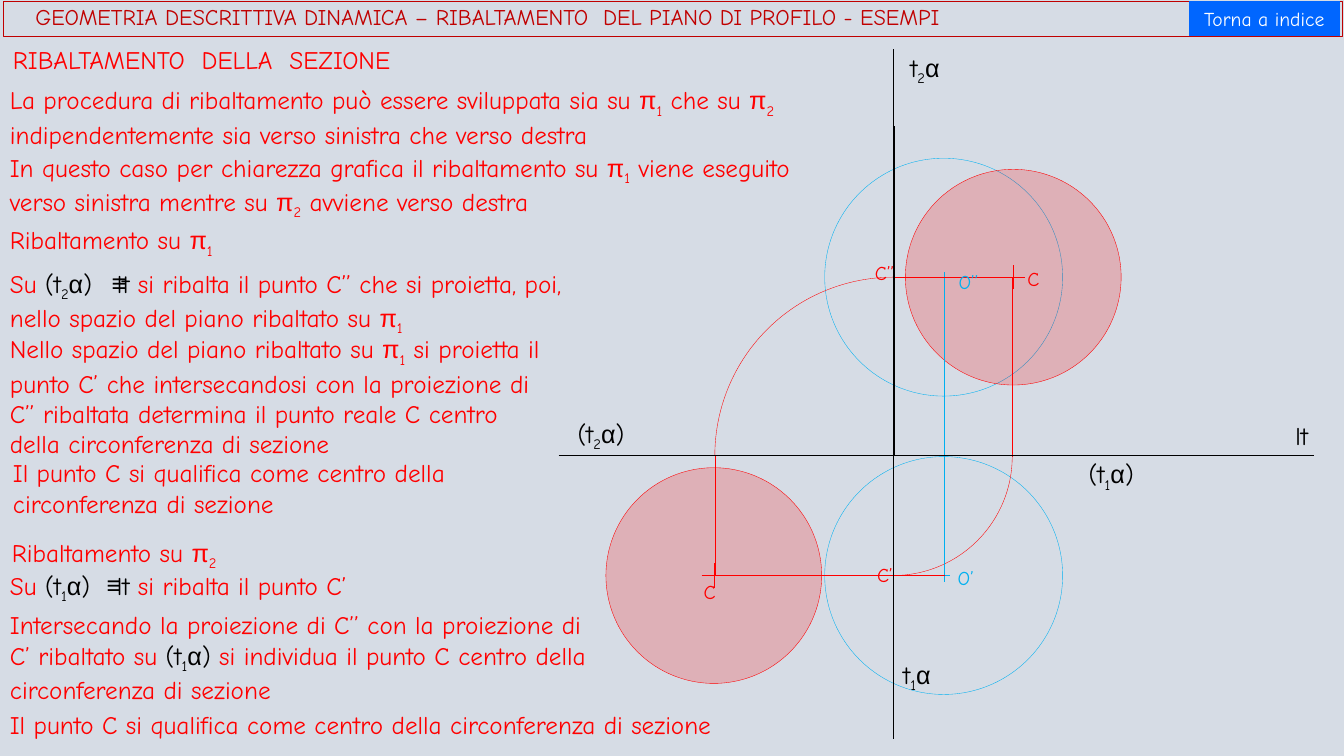
from itertools import groupby

from lxml import etree
from pptx import Presentation, util as u
from pptx.dml.color import RGBColor
from pptx.enum import shapes, text
from pptx.oxml.ns import qn

PX = 9144  # EMU per px, 100 px to the inch
RED, DARK_RED, CYAN, BLACK = "FF0000", "C00000", "00B0F0", "000000"
WHITE, BLUE, GROUND = "FFFFFF", "0066FF", "D6DCE5"
SUBSCRIPTS = {"₁": "1", "₂": "2"}
SYMBOLS = "πα≡"

TITLE = "GEOMETRIA DESCRITTIVA DINAMICA – RIBALTAMENTO  DEL PIANO DI PROFILO - ESEMPI"
BUTTON = "Torna a indice"

# Square brackets enclose the black part of a red sentence.
EXPLANATIONS = [  # left, top, width, height, text
    (3, 39, 493, 40, "RIBALTAMENTO  DELLA  SEZIONE"),
    (0, 79, 823, 71, "La procedura di ribaltamento può essere sviluppata sia su π₁ che su π₂ "
                     "indipendentemente sia verso sinistra che verso destra"),
    (0, 146, 807, 71, "In questo caso per chiarezza grafica il ribaltamento su π₁ viene eseguito "
                      "verso sinistra mentre su π₂ avviene verso destra"),
    (0, 218, 256, 40, "Ribaltamento su π₁"),
    (0, 261, 611, 71, "Su [(t₂α)\tlt ]si ribalta il punto C’’ che si proietta, poi, "
                      "nello spazio del piano ribaltato su π₁"),
    (0, 326, 554, 131, "Nello spazio del piano ribaltato su π₁ si proietta il punto C’ che "
                       "intersecandosi con la proiezione di C’’ ribaltata determina il punto "
                       "reale C centro della circonferenza di sezione"),
    (3, 449, 567, 71, "Il punto C si qualifica come centro della circonferenza di sezione"),
    (2, 528, 256, 40, "Ribaltamento su π₂"),
    (0, 561, 498, 40, "Su [(t₁α)\tlt ]si ribalta il punto C’"),
    (0, 600, 599, 101, "Intersecando la proiezione di C’’ con la proiezione di C’ ribaltato su "
                       "[(t₁α) ]si individua il punto C centro della circonferenza di sezione"),
    (0, 699, 787, 40, "Il punto C si qualifica come centro della circonferenza di sezione"),
]
TRACE_LABELS = [
    (1275, 412, 56, 40, "lt"), (893, 47, 86, 40, "t₂α"), (886, 649, 56, 40, "t₁α"),
    (563, 410, 86, 40, "(t₂α)"), (1070, 450, 86, 40, "(t₁α)"),
    (101, 260, 71, 40, "≡"), (96, 560, 45, 40, "≡"),
]
CENTRE_LABELS = [
    (940, 557, 45, 34, "O’", CYAN), (941, 263, 47, 34, "O’’", CYAN),
    (858, 254, 47, 34, "C’’", RED), (860, 554, 45, 34, "C’", RED),
    (688, 570, 45, 34, "C", RED), (1009, 260, 45, 34, "C", RED),
]

# Drawing: ground line, trace axis, and rows and columns of the centres
GROUND_Y, AXIS_X = 452, 886
UPPER_Y, LOWER_Y = 275, 571
LEFT_C, RIGHT_C, O_X = 709, 1004, 936
BASE_RADIUS, SECTION_RADIUS, TICK = 118, 107, 12
SECTIONS = [(LEFT_C - 1, LOWER_Y), (RIGHT_C + 1, UPPER_Y)]
ARCS = [  # left, top, diameter, start and end degrees
    (709, 275, 354, 180, 270),
    (768, 335, 236, 0, 90),
]
LINES = [  # x1, y1, x2, y2, colour
    (O_X - 6, LOWER_Y, O_X + 6, LOWER_Y, CYAN),
    (O_X - 6, UPPER_Y, O_X + 6, UPPER_Y, CYAN),
    (O_X, 577, O_X, 270, CYAN),
    (AXIS_X, 168, AXIS_X, 382, RED),
    (AXIS_X, 465, AXIS_X, 680, RED),
    (AXIS_X, UPPER_Y, RIGHT_C, UPPER_Y, RED),
    (LEFT_C, LOWER_Y, O_X + 1, LOWER_Y, RED),
    (LEFT_C, GROUND_Y, LEFT_C, LOWER_Y, RED),
    (RIGHT_C, GROUND_Y + 1, RIGHT_C, UPPER_Y, RED),
    (AXIS_X, 49, AXIS_X, 733, BLACK),
    (554, GROUND_Y, 1303, GROUND_Y, BLACK),
    (AXIS_X + 1, 125, AXIS_X + 1, 451, BLACK),
    (AXIS_X, 451, AXIS_X, 727, BLACK),
]


def colour(value):
    return RGBColor.from_string(value)


def box(*lengths):
    return [u.Emu(length * PX) for length in lengths]


def styled_runs(content, ink):
    """Yield (text, colour, is symbol, is subscript) for each stretch of one style."""
    styled, current = [], ink
    for char in content:
        if char in "[]":
            current = BLACK if char == "[" else ink
        else:
            style = current, char in SYMBOLS, char in SUBSCRIPTS
            styled.append((SUBSCRIPTS.get(char, char), style))
    for style, group in groupby(styled, key=lambda item: item[1]):
        yield "".join(char for char, _ in group), *style


def write(frame, content, size=18, ink=RED, align=text.PP_ALIGN.LEFT,
          anchor=text.MSO_ANCHOR.TOP, fit=text.MSO_AUTO_SIZE.NONE):
    frame.word_wrap, frame.auto_size, frame.vertical_anchor = True, fit, anchor
    paragraph = frame.paragraphs[0]
    paragraph.alignment = align
    for words, run_ink, symbol, subscript in styled_runs(content, ink):
        run = paragraph.add_run()
        run.text = words
        run.font.name = "Arial" if symbol else "Comic Neue"
        run.font.size = u.Pt(size)
        run.font.color.rgb = colour(run_ink)
        if subscript:
            run.font._element.set("baseline", "-25000")
    if "\t" in content:
        stops = etree.SubElement(paragraph._p.get_or_add_pPr(), qn("a:tabLst"))
        etree.SubElement(stops, qn("a:tab"), pos=str(106 * PX), algn="l")


def label(left, top, width, height, content, ink=BLACK, size=18):
    frame = slide.shapes.add_textbox(*box(left, top, width, height)).text_frame
    write(frame, content, size=size, ink=ink, fit=text.MSO_AUTO_SIZE.SHAPE_TO_FIT_TEXT)


def outline(shape, ink):
    shape.line.color.rgb = colour(ink)
    shape.line.width = u.Pt(0.25)


def figure(kind, left, top, width, height, line=None, fill=None, alpha=None):
    shape = slide.shapes.add_shape(kind, *box(left, top, width, height))
    shape.shadow.inherit = False
    if line:
        outline(shape, line)
    else:
        shape.line.fill.background()
    if fill:
        shape.fill.solid()
        shape.fill.fore_color.rgb = colour(fill)
    else:
        shape.fill.background()
    if alpha:
        tint = shape._element.spPr.find(qn("a:solidFill"))[0]
        etree.SubElement(tint, qn("a:alpha"), val=str(alpha * 1000))
    return shape


def circle(x, y, radius, **look):
    figure(shapes.MSO_SHAPE.OVAL, x - radius, y - radius, 2 * radius, 2 * radius, **look)


def segment(x1, y1, x2, y2, ink):
    line = slide.shapes.add_connector(shapes.MSO_CONNECTOR.STRAIGHT, *box(x1, y1, x2, y2))
    outline(line, ink)
    etree.SubElement(line._element.spPr, qn("a:effectLst"))


deck = Presentation()
deck.slide_width, deck.slide_height = box(1333, 750)
slide = deck.slides.add_slide(deck.slide_layouts[5])
slide.background.fill.solid()
slide.background.fill.fore_color.rgb = colour(GROUND)

title = slide.shapes.title
title.left, title.top, title.width, title.height = box(3, 1, 1328, 35)
outline(title, DARK_RED)
write(title.text_frame, TITLE, size=16, ink=DARK_RED, anchor=text.MSO_ANCHOR.MIDDLE)
title.text_frame.margin_left = u.Emu(32 * PX)
title.text_frame.paragraphs[0].line_spacing = 0.9

button = figure(shapes.MSO_SHAPE.ACTION_BUTTON_CUSTOM, 1179, 1, 150, 35, fill=BLUE)
write(button.text_frame, BUTTON, size=14, ink=WHITE, align=text.PP_ALIGN.CENTER,
      anchor=text.MSO_ANCHOR.MIDDLE)

for base_y in (LOWER_Y, UPPER_Y):
    circle(O_X, base_y, BASE_RADIUS, line=CYAN)
for left, top, diameter, start, end in ARCS:
    arc = figure(shapes.MSO_SHAPE.ARC, left, top, diameter, diameter, line=RED)
    arc.adjustments[0], arc.adjustments[1] = start * 0.6, end * 0.6
for x, y in SECTIONS:
    circle(x, y, SECTION_RADIUS, line=RED)
    segment(x - TICK, y, x + TICK, y, RED)
    segment(x, y - TICK, x, y + TICK, RED)
    circle(x, y, SECTION_RADIUS, fill=RED, alpha=20)
for line_ends in LINES:
    segment(*line_ends)

for explanation in EXPLANATIONS:
    label(*explanation, ink=RED)
for trace in TRACE_LABELS:
    label(*trace)
for centre in CENTRE_LABELS:
    label(*centre, size=14)

deck.save("out.pptx")
